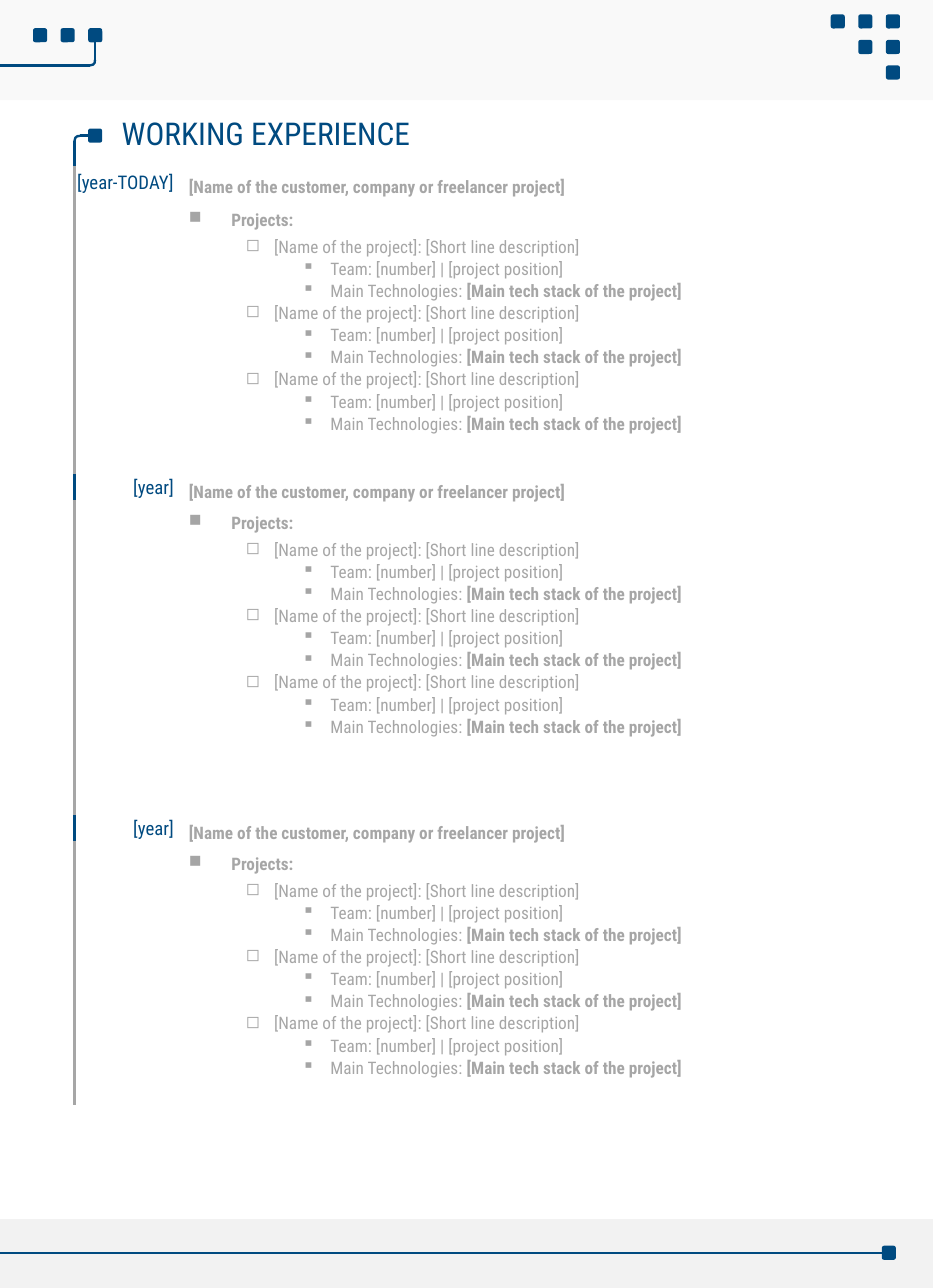
from lxml import etree
from pptx import Presentation
from pptx.dml.color import RGBColor
from pptx.enum.shapes import MSO_CONNECTOR, MSO_SHAPE
from pptx.enum.text import PP_ALIGN
from pptx.oxml.ns import qn
from pptx.util import Pt

STRAIGHT, CURVE = MSO_CONNECTOR.STRAIGHT, MSO_CONNECTOR.CURVE
RECT, ROUNDED = MSO_SHAPE.RECTANGLE, MSO_SHAPE.ROUNDED_RECTANGLE
LEFT, RIGHT = PP_ALIGN.LEFT, PP_ALIGN.RIGHT
TOP_SIDE, LEFT_SIDE, BOTTOM_SIDE, RIGHT_SIDE = range(4)

BLUE = RGBColor(0x00, 0x4A, 0x80)
GRAY = RGBColor(0xA6, 0xA6, 0xA6)
BULLET_GRAY = RGBColor(0xA5, 0xA5, 0xA5)
HEADER_FILL = RGBColor(0xF9, 0xF9, 0xF9)
FOOTER_FILL = RGBColor(0xF2, 0xF2, 0xF2)
FONT = "Roboto Condensed"

# Content
TITLE = "WORKING EXPERIENCE"
CUSTOMER = "[Name of the customer, company or freelancer project]"
PROJECTS_LABEL = "Projects:"
PROJECTS_PER_ENTRY = 3
# (bullet, left margin, hanging indent, [(text, bold), ...])
PROJECT = [
    ("◻", 36, 18, [("[Name of the project]: [Short line description]", False)]),
    ("▪", 72, 18, [("Team: [number] | [project position]", False)]),
    ("▪", 72, 18, [("Main Technologies: ", False),
                   ("[Main tech stack of the project]", True)]),
]
# (year, top of customer line, top of projects label)
ENTRIES = [("[year-TODAY]", 108, 129),
           ("[year]", 302.7, 322.4),
           ("[year]", 520.4, 540.1)]

# Layout
PAGE_W, PAGE_H = 595.44, 822.24
HEADER_H, FOOTER_H = 64, 44
SQUARE = 9
SQUARE_STEP_X, SQUARE_STEP_Y = 17.6, 16.3
CORNER = 3.6
RAIL_X, RAIL_TOP, RAIL_BOTTOM = 47.5, 106, 705.6
ACCENT_H = 16.6

prs = Presentation()
prs.slide_width, prs.slide_height = Pt(PAGE_W), Pt(PAGE_H)
slide = prs.slides.add_slide(prs.slide_layouts[6])
shapes = slide.shapes


def add_block(kind, left, top, width, height, fill):
    block = shapes.add_shape(kind, Pt(left), Pt(top), Pt(width), Pt(height))
    block.shadow.inherit = False
    block.fill.solid()
    block.fill.fore_color.rgb = fill
    block.line.fill.background()
    return block


def add_square(left, top):
    return add_block(ROUNDED, left, top, SQUARE, SQUARE, BLUE)


def add_line(x1, y1, x2, y2, color=BLUE, kind=STRAIGHT):
    line = shapes.add_connector(kind, Pt(x1), Pt(y1), Pt(x2), Pt(y2))
    line.line.color.rgb = color
    line.line.width = Pt(1.5)
    etree.SubElement(line._element.spPr, qn("a:effectLst"))
    return line


def add_corner(x1, y1, x2, y2, rotation=0):
    corner = add_line(x1, y1, x2, y2, kind=CURVE)
    properties = corner._element.spPr
    guides = properties.find(qn("a:prstGeom")).find(qn("a:avLst"))
    etree.SubElement(guides, qn("a:gd"), name="adj1", fmla="val 10000")
    if rotation:
        properties.find(qn("a:xfrm")).set("rot", str(rotation * 60000))


def add_text(left, top, width, height, lines, size, color, spacing, align=LEFT):
    box = shapes.add_textbox(Pt(left), Pt(top), Pt(width), Pt(height))
    frame = box.text_frame
    frame.word_wrap = True
    for i, (bullet, margin, hanging, runs) in enumerate(lines):
        paragraph = frame.paragraphs[0] if i == 0 else frame.add_paragraph()
        paragraph.alignment = align
        paragraph.line_spacing = spacing
        if bullet:
            props = paragraph._p.get_or_add_pPr()
            props.set("marL", str(Pt(margin)))
            props.set("indent", str(-Pt(hanging)))
            bullet_color = etree.SubElement(props, qn("a:buClr"))
            etree.SubElement(bullet_color, qn("a:srgbClr"), val=str(BULLET_GRAY))
            etree.SubElement(props, qn("a:buChar"), char=bullet)
        for text, bold in runs:
            run = paragraph.add_run()
            run.text = text
            run.font.name = FONT
            run.font.size = Pt(size)
            run.font.bold = bold
            run.font.color.rgb = color


def plain(text, bold=False):
    return [(None, 0, 0, [(text, bold)])]


# Header band with a triangle of squares on the right
add_block(RECT, 0, 0, PAGE_W, HEADER_H, HEADER_FILL)
for row in range(3):
    for column in range(row, 3):
        add_square(530.2 + column * SQUARE_STEP_X, 9.2 + row * SQUARE_STEP_Y)

# Header squares on the left with the line leaving the page
for column in range(3):
    last_square = add_square(21.1 + column * SQUARE_STEP_X, 18)
drop_x, header_line_y = 21.1 + 2 * SQUARE_STEP_X + SQUARE / 2, 41.8
add_corner(drop_x, header_line_y - CORNER, drop_x - CORNER, header_line_y)
add_line(drop_x - CORNER, header_line_y, 0, header_line_y)
drop = add_line(drop_x, header_line_y - CORNER, drop_x, 18 + SQUARE)
drop.end_connect(last_square, BOTTOM_SIDE)

# Footer band
add_block(RECT, 0, PAGE_H - FOOTER_H, PAGE_W, FOOTER_H, FOOTER_FILL)
footer_square = add_square(562.8, 795.3)
footer_line = add_line(562.8, 799.8, 0, 799.8)
footer_line.begin_connect(footer_square, LEFT_SIDE)

# Title with its square and the start of the timeline
title_y = 86.6
add_text(70.6, 74.2, 266, 33.8, plain(TITLE), 20, BLUE, 0.8)
title_square = add_square(56.2, title_y - SQUARE / 2)
add_corner(RAIL_X, title_y, RAIL_X + CORNER, title_y + CORNER, rotation=90)
branch = add_line(RAIL_X + CORNER, title_y, 56.2, title_y)
branch.end_connect(title_square, LEFT_SIDE)
add_line(RAIL_X, RAIL_TOP, RAIL_X, RAIL_BOTTOM, GRAY)
add_line(RAIL_X, title_y + CORNER, RAIL_X, RAIL_TOP)

# Timeline entries
for index, (year, top, projects_top) in enumerate(ENTRIES):
    if index:
        add_line(RAIL_X, top, RAIL_X, top + ACCENT_H)
    add_text(28, top + 0.4, 90, 22, plain(year), 12, BLUE, 0.8, RIGHT)
    add_text(113.5, top, 424, 23, plain(CUSTOMER, True), 11, GRAY, 1.07)
    add_text(113.5, projects_top, 436, 19,
             [("■", 27, 27, [(PROJECTS_LABEL, True)])], 11, GRAY, 1.07)
    add_text(131.8, projects_top + 17.3, 421, 132.5,
             PROJECT * PROJECTS_PER_ENTRY, 11, GRAY, 1.07)

prs.save("out.pptx")
